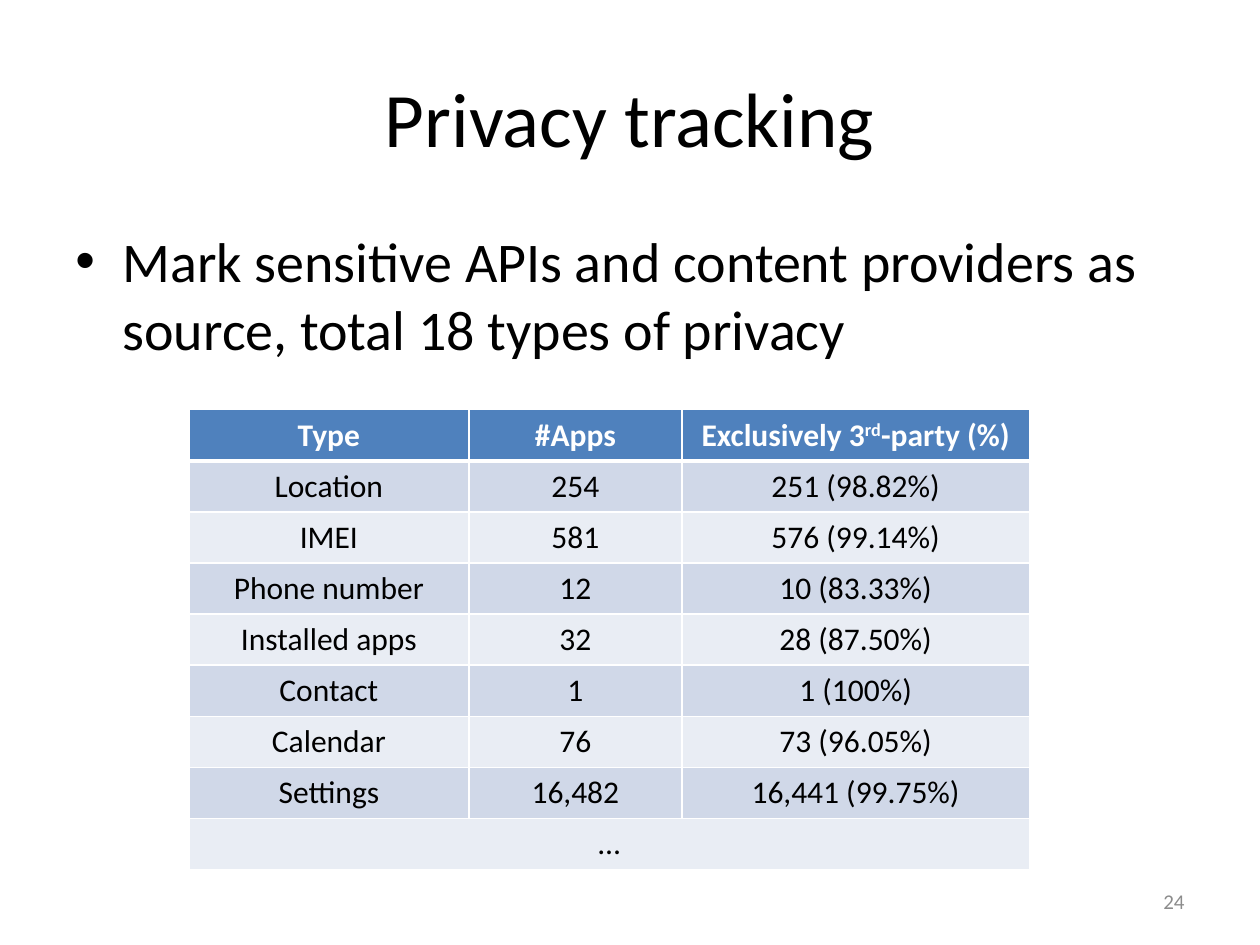
from lxml.etree import SubElement
from pptx import Presentation
from pptx.dml.color import RGBColor
from pptx.enum.text import MSO_ANCHOR as Anchor, PP_ALIGN as Align
from pptx.oxml.ns import qn
from pptx.util import Cm, Pt

FONT = "Calibri"
BLACK, WHITE, GREY = "000000", "FFFFFF", "8C8C8C"
HEADER_FILL, BAND_FILLS = "4F81BD", ("D0D8E8", "E9EDF4")
COLUMN_WIDTHS = (5.64, 4.3, 7)
HEADINGS = (("Type",), ("#Apps",), ("Exclusively 3", "rd", "-party (%)"))
PRIVACY_TYPES = (
    ("Location", "254", "251 (98.82%)"),
    ("IMEI", "581", "576 (99.14%)"),
    ("Phone number", "12", "10 (83.33%)"),
    ("Installed apps", "32", "28 (87.50%)"),
    ("Contact", "1", "1 (100%)"),
    ("Calendar", "76", "73 (96.05%)"),
    ("Settings", "16,482", "16,441 (99.75%)"),
    ("…", "", ""),
)


def color(hex_value):
    return RGBColor.from_string(hex_value)


def style_paragraph(paragraph, size, hex_value, align, bold=False):
    paragraph.alignment = align
    font = paragraph.font
    font.name, font.size, font.bold = FONT, Pt(size), bold
    font.color.rgb = color(hex_value)


def add_text(slide, box, text, anchor):
    """Add a wrapping text box and return its only paragraph."""
    frame = slide.shapes.add_textbox(*map(Cm, box)).text_frame
    frame.word_wrap = True
    frame.vertical_anchor = anchor
    frame.text = text
    return frame.paragraphs[0]


def add_title(slide, box):
    title = add_text(slide, box, "Privacy tracking", Anchor.MIDDLE)
    style_paragraph(title, 44, BLACK, Align.CENTER)


def add_body(slide, box):
    point = add_text(
        slide, box,
        "Mark sensitive APIs and content providers as source, "
        "total 18 types of privacy", Anchor.TOP)
    properties = point._p.get_or_add_pPr()
    properties.set("marL", str(Cm(0.95)))
    properties.set("indent", str(Cm(-0.95)))
    SubElement(properties, qn("a:buFont"), typeface="Arial")
    SubElement(properties, qn("a:buChar"), char="•")
    style_paragraph(point, 32, BLACK, Align.LEFT)


def add_page_number(slide, box):
    number = add_text(slide, box, "24", Anchor.MIDDLE)
    style_paragraph(number, 12, GREY, Align.RIGHT)


def set_borders(cell, top, bottom):
    """Draw white borders; top and bottom are widths in points."""
    properties = cell._tc.get_or_add_tcPr()
    for side, width in (("L", 1), ("R", 1), ("T", top), ("B", bottom)):
        line = SubElement(properties, qn(f"a:ln{side}"), w=str(Pt(width)))
        fill = SubElement(line, qn("a:solidFill"))
        SubElement(fill, qn("a:srgbClr"), val=WHITE)


def fill_cell(cell, parts, row):
    """Write the parts of a cell, every second one raised, and style it."""
    header = row == 0
    paragraph = cell.text_frame.paragraphs[0]
    for index, part in enumerate(parts):
        run = paragraph.add_run()
        run.text = part
        if index % 2:
            run._r.get_or_add_rPr().set("baseline", "30000")
    style_paragraph(paragraph, 18, WHITE if header else BLACK,
                    Align.CENTER, bold=header)
    set_borders(cell, top=3 if row == 1 else 1, bottom=3 if header else 1)
    cell.fill.solid()
    cell.fill.fore_color.rgb = color(
        HEADER_FILL if header else BAND_FILLS[(row - 1) % 2])


def add_privacy_table(slide, box):
    rows = [HEADINGS] + [[(text,) for text in row] for row in PRIVACY_TYPES]
    table = slide.shapes.add_table(
        len(rows), len(COLUMN_WIDTHS), *map(Cm, box)).table
    for column, width in zip(table.columns, COLUMN_WIDTHS):
        column.width = Cm(width)
    for r, row in enumerate(rows):
        table.rows[r].height = Cm(box[3] / len(rows))
        for c, parts in enumerate(row):
            fill_cell(table.cell(r, c), parts, r)
    last = len(rows) - 1
    table.cell(last, 0).merge(table.cell(last, len(COLUMN_WIDTHS) - 1))


def main():
    deck = Presentation()
    deck.slide_width, deck.slide_height = Cm(25.4), Cm(19.05)
    slide = deck.slides.add_slide(deck.slide_layouts[6])
    add_title(slide, (1.27, 0.76, 22.86, 3.18))
    add_body(slide, (1.27, 4.45, 22.86, 12.57))
    add_page_number(slide, (18.2, 17.66, 5.93, 1.01))
    add_privacy_table(slide, (3.81, 8.26, sum(COLUMN_WIDTHS), 9.27))
    deck.save("out.pptx")


if __name__ == "__main__":
    main()
